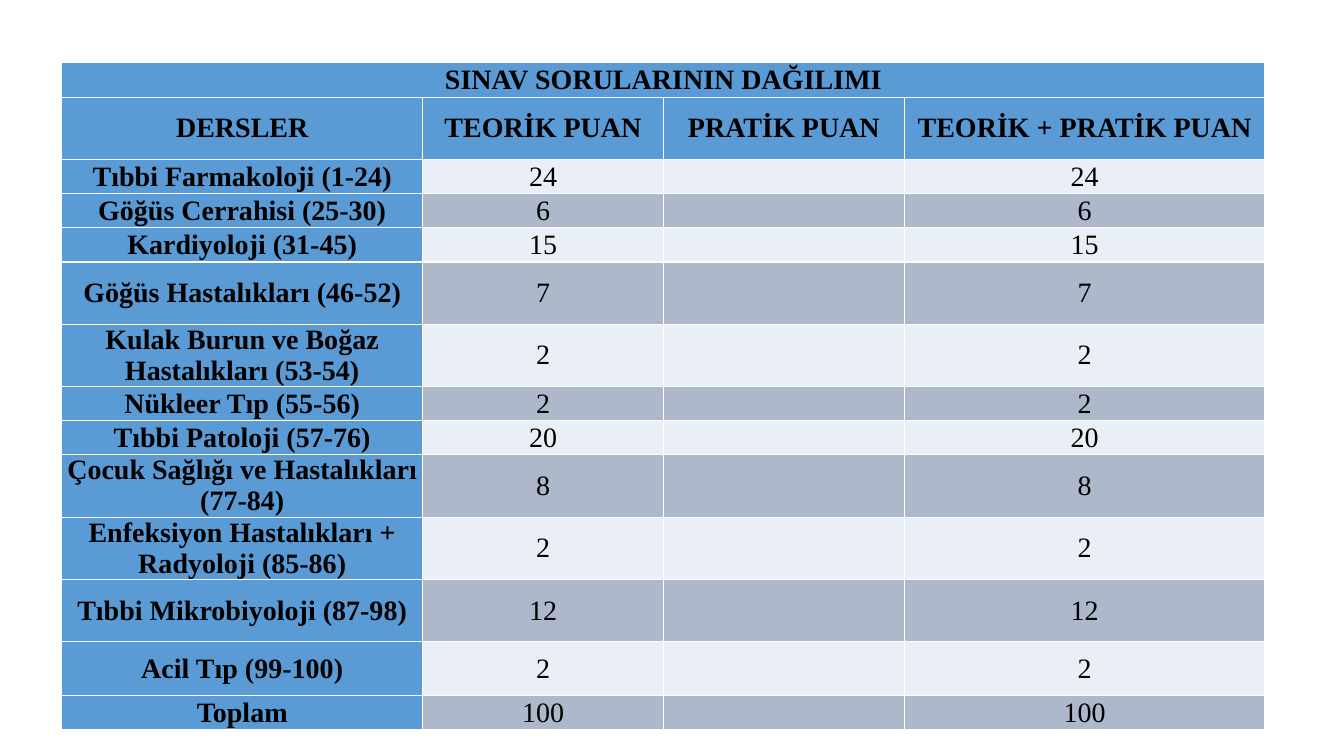
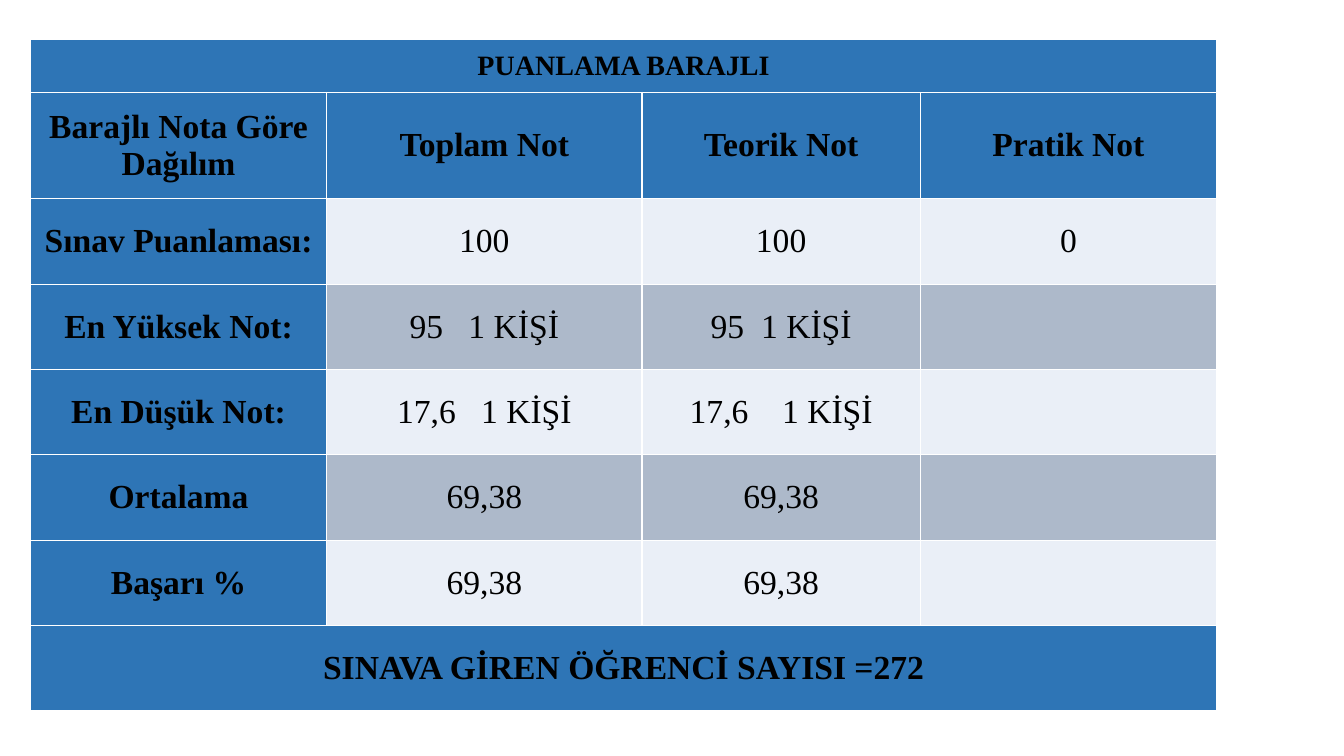
from pptx import Presentation
from pptx.dml.color import RGBColor
from pptx.enum.text import MSO_ANCHOR as Anchor, PP_ALIGN as Align
from pptx.oxml import parse_xml
from pptx.oxml.ns import nsdecls
from pptx.util import Cm, Pt

COLORS = {"text": "000000", "border": "FFFFFF", "light": "EAEFF7",
          "dark": "ADB9CA", "sky": "5B9BD5", "blue": "2E75B6"}
FONT = "Times New Roman"
BORDER_PT = 1
HEADER_ROWS = 2

# Content: a row with one entry spans the table
COURSES = [
    ("Tıbbi Farmakoloji (1-24)", "24"),
    ("Göğüs Cerrahisi (25-30)", "6"),
    ("Kardiyoloji (31-45)", "15"),
    ("Göğüs Hastalıkları (46-52)", "7"),
    ("Kulak Burun ve Boğaz Hastalıkları (53-54)", "2"),
    ("Nükleer Tıp (55-56)", "2"),
    ("Tıbbi Patoloji (57-76)", "20"),
    ("Çocuk Sağlığı ve Hastalıkları (77-84)", "8"),
    ("Enfeksiyon Hastalıkları + Radyoloji (85-86)", "2"),
    ("Tıbbi Mikrobiyoloji (87-98)", "12"),
    ("Acil Tıp (99-100)", "2"),
    ("Toplam", "100"),
]
QUESTION_ROWS = [
    ["SINAV SORULARININ DAĞILIMI"],
    ["DERSLER", "TEORİK PUAN", "PRATİK PUAN", "TEORİK + PRATİK PUAN"],
] + [[course, points, "", points] for course, points in COURSES]

# A tuple is a grade, a head count and the extra gap between them in points
GRADE_ROWS = [
    ["PUANLAMA BARAJLI"],
    ["Barajlı Nota Göre Dağılım", "Toplam Not", "Teorik Not", "Pratik Not"],
    ["Sınav Puanlaması:", "100", "100", "0"],
    ["En Yüksek Not:", ("95", "1 KİŞİ", 12), ("95", "1 KİŞİ", 6), ""],
    ["En Düşük Not:", ("17,6", "1 KİŞİ", 12), ("17,6", "1 KİŞİ", 18), ""],
    ["Ortalama", "69,38", "69,38", ""],
    ["Başarı %", "69,38", "69,38", ""],
    ["SINAVA GİREN ÖĞRENCİ SAYISI =272"],
]

ONE_LINE, TWO_LINES = 0.86, 1.57

# Lengths in centimetres, text sizes in points
TABLES = [
    {"rows": QUESTION_ROWS, "at": (1.56, 1.56), "accent": "sky",
     "title_size": 20, "size": 20, "widths": [9.09, 6.07, 6.07, 9.09],
     "heights": [0.89, TWO_LINES] + [ONE_LINE] * 3 + [TWO_LINES] * 2
     + [ONE_LINE] * 2 + [TWO_LINES] * 3 + [1.36, ONE_LINE]},
    {"rows": GRADE_ROWS, "at": (0.77, 0.99), "accent": "blue",
     "title_size": 20, "size": 24, "widths": [7.46, 7.95, 7.01, 7.47],
     "heights": [1.34, 2.68] + [2.15] * 6},
]


def color(name):
    return RGBColor.from_string(COLORS[name])


def add_borders(cell):
    props = cell._tc.get_or_add_tcPr()
    for side in ("lnL", "lnR", "lnT", "lnB"):
        props.append(parse_xml(
            f'<a:{side} {nsdecls("a")} w="{Pt(BORDER_PT)}"><a:solidFill>'
            f'<a:srgbClr val="{COLORS["border"]}"/></a:solidFill></a:{side}>'))


def write_cell(cell, value, size, bold):
    cell.vertical_anchor = Anchor.MIDDLE
    para = cell.text_frame.paragraphs[0]
    para.alignment = Align.CENTER
    if isinstance(value, tuple):
        grade, count, gap = value
        for text in (grade, " ", count):
            para.add_run().text = text
        # Letter spacing widens the single space
        para.runs[1].font._element.set("spc", str(gap * 100))
    elif value:
        para.text = value
    for span in para.runs:
        span.font.name = FONT
        span.font.size = Pt(size)
        span.font.bold = bold
        span.font.color.rgb = color("text")


def add_score_table(page, layout):
    rows, widths, heights = layout["rows"], layout["widths"], layout["heights"]
    left, top = layout["at"]
    table = page.shapes.add_table(
        len(rows), len(widths), Cm(left), Cm(top),
        Cm(sum(widths)), Cm(sum(heights))).table
    table.first_row = table.horz_banding = False
    for column, width in zip(table.columns, widths):
        column.width = Cm(width)
    for r, values in enumerate(rows):
        table.rows[r].height = Cm(heights[r])
        banner = len(values) == 1
        band = "dark" if (r - HEADER_ROWS) % 2 else "light"
        for c in range(len(widths)):
            cell = table.cell(r, c)
            heading = banner or r < HEADER_ROWS or c == 0
            cell.margin_left = cell.margin_right = 0
            cell.margin_top = cell.margin_bottom = 0
            add_borders(cell)
            cell.fill.solid()
            cell.fill.fore_color.rgb = color(layout["accent"] if heading else band)
            if c < len(values):
                size = layout["title_size" if r == 0 else "size"]
                write_cell(cell, values[c], size, heading)
        if banner:
            table.cell(r, 0).merge(table.cell(r, len(widths) - 1))


def main():
    deck = Presentation()
    deck.slide_width, deck.slide_height = Cm(33.87), Cm(19.05)
    for layout in TABLES:
        add_score_table(deck.slides.add_slide(deck.slide_layouts[6]), layout)
    deck.save("out.pptx")


if __name__ == "__main__":
    main()
